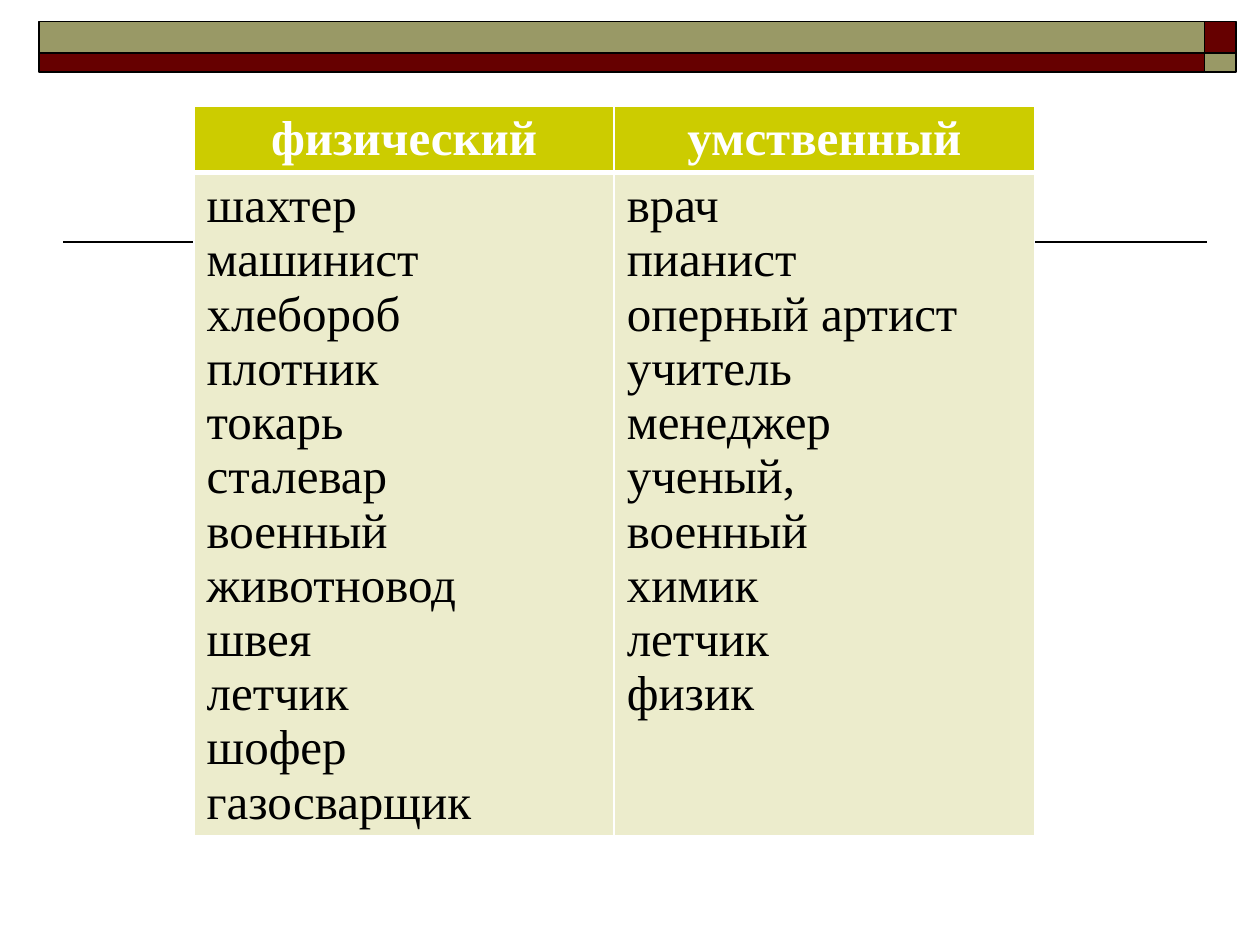
from dataclasses import dataclass

from lxml.etree import SubElement
from pptx import Presentation
from pptx.dml.color import RGBColor
from pptx.enum.shapes import MSO_CONNECTOR, MSO_SHAPE
from pptx.enum.text import PP_ALIGN
from pptx.oxml import parse_xml
from pptx.oxml.ns import nsdecls, qn
from pptx.util import Inches, Pt


@dataclass(frozen=True)
class Theme:
    font: str = "Times New Roman"
    size: int = 28
    black: str = "000000"
    white: str = "FFFFFF"
    maroon: str = "660000"
    olive: str = "999966"
    header: str = "CCCC00"
    body: str = "ECECCC"
    line: float = 1
    header_line: float = 3


THEME = Theme()

PROFESSIONS = {
    "физический": [
        "шахтер", "машинист", "хлебороб", "плотник", "токарь", "сталевар",
        "военный", "животновод", "швея", "летчик", "шофер", "газосварщик",
    ],
    "умственный": [
        "врач", "пианист", "оперный артист", "учитель", "менеджер",
        "ученый,", "военный", "химик", "летчик", "физик",
    ],
}


def rgb(color):
    return RGBColor.from_string(color)


def write_text(tf, lines, *, color=THEME.black, bold=False, align=PP_ALIGN.LEFT):
    """Put each line in its own paragraph."""
    for i, line in enumerate(lines):
        p = tf.paragraphs[0] if i == 0 else tf.add_paragraph()
        p.alignment = align
        r = p.add_run()
        r.text = line
        r.font.name = THEME.font
        r.font.size = Pt(THEME.size)
        r.font.bold = bold
        r.font.color.rgb = rgb(color)


def add_rule(s, left, top, width):
    line = s.shapes.add_connector(
        MSO_CONNECTOR.STRAIGHT,
        Inches(left), Inches(top), Inches(left + width), Inches(top),
    )
    line.line.color.rgb = rgb(THEME.black)
    line.line.width = Pt(THEME.line)
    SubElement(line._element.spPr, qn("a:effectLst"))


def add_banner(s, left, top, width, height):
    """Two bands, each ending in a block of the other band's colour."""
    end = 0.25
    upper = 0.25
    bands = [
        (top, upper, THEME.olive, THEME.maroon),
        (top + upper, height - upper, THEME.maroon, THEME.olive),
    ]
    for y, h, band_color, end_color in bands:
        for x, w, color in [
            (left, width - end, band_color),
            (left + width - end, end, end_color),
        ]:
            sp = s.shapes.add_shape(
                MSO_SHAPE.RECTANGLE, Inches(x), Inches(y), Inches(w), Inches(h)
            )
            sp.shadow.inherit = False
            sp.fill.solid()
            sp.fill.fore_color.rgb = rgb(color)
            sp.line.color.rgb = rgb(THEME.black)
            sp.line.width = Pt(THEME.line)


def style_cell(cell, fill, **widths):
    """Fill a cell and give it white borders; widths override by side (L, R, T, B)."""
    cell.fill.solid()
    cell.fill.fore_color.rgb = rgb(fill)
    tcPr = cell._tc.get_or_add_tcPr()
    for i, side in enumerate("LRTB"):
        width = Pt(widths.get(side, THEME.line))
        tcPr.insert(i, parse_xml(
            f'<a:ln{side} {nsdecls("a")} w="{width}"><a:solidFill>'
            f'<a:srgbClr val="{THEME.white}"/></a:solidFill></a:ln{side}>'
        ))


def add_profession_table(s, left, top, width, height):
    header_height = 0.53
    table = s.shapes.add_table(
        2, len(PROFESSIONS),
        Inches(left), Inches(top), Inches(width), Inches(height),
    ).table
    table.rows[0].height = Inches(header_height)
    table.rows[1].height = Inches(height - header_height)
    for col, (title, names) in enumerate(PROFESSIONS.items()):
        head, body = table.cell(0, col), table.cell(1, col)
        style_cell(head, THEME.header, B=THEME.header_line)
        style_cell(body, THEME.body, T=THEME.header_line)
        write_text(head.text_frame, [title], color=THEME.white, bold=True,
                   align=PP_ALIGN.CENTER)
        write_text(body.text_frame, names)


def main():
    prs = Presentation()
    prs.slide_width, prs.slide_height = Inches(10), Inches(7.5)
    s = prs.slides.add_slide(prs.slide_layouts[6])
    add_rule(s, 0.5, 1.92, 9.08)
    add_banner(s, 0.31, 0.17, 9.5, 0.4)
    add_profession_table(s, 1.54, 0.84, 6.67, 5.79)
    prs.save("out.pptx")


if __name__ == "__main__":
    main()
